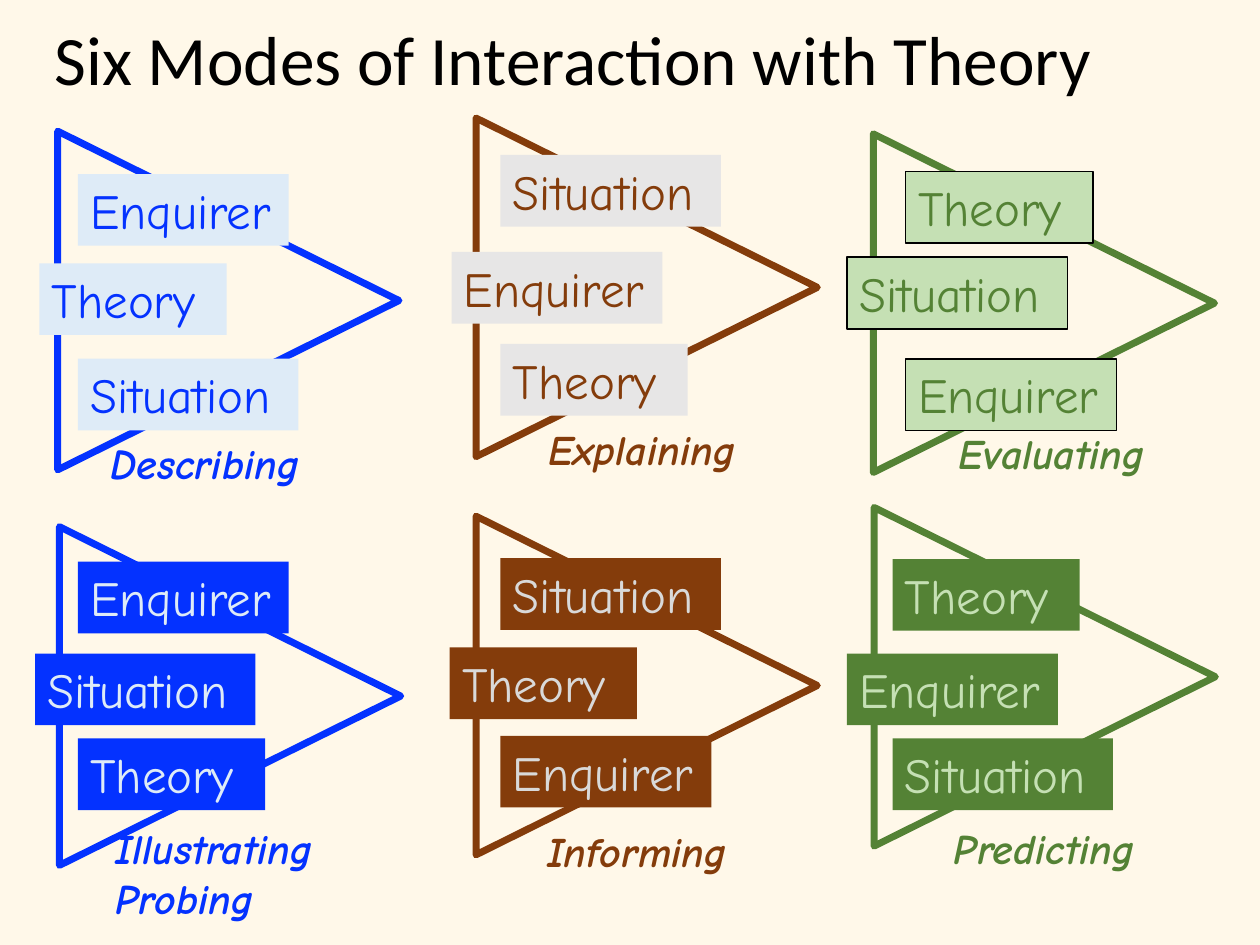
from dataclasses import dataclass

from pptx import Presentation
from pptx.dml.color import RGBColor
from pptx.enum.shapes import MSO_SHAPE
from pptx.enum.text import MSO_ANCHOR, PP_ALIGN
from pptx.util import Pt

RECTANGLE = MSO_SHAPE.RECTANGLE
TOP, MIDDLE = MSO_ANCHOR.TOP, MSO_ANCHOR.MIDDLE
LEFT = PP_ALIGN.LEFT

CREAM = RGBColor(0xFF, 0xF8, 0xE9)
BLACK = RGBColor(0x00, 0x00, 0x00)
BLUE = RGBColor(0x04, 0x32, 0xFF)
PALE_BLUE = RGBColor(0xDE, 0xEB, 0xF7)
BROWN = RGBColor(0x84, 0x3C, 0x0B)
PALE_GREY = RGBColor(0xE7, 0xE6, 0xE6)
GREY = RGBColor(0xD9, 0xD9, 0xD9)
GREEN = RGBColor(0x54, 0x82, 0x35)
PALE_GREEN = RGBColor(0xC5, 0xE0, 0xB4)

TITLE_FONT = "Calibri"
MODE_FONT = "Comic Neue"
TERM_WIDTHS = {"Enquirer": 120.5, "Theory": 107, "Situation": 126}
TERM_HEIGHT = 41
TRIANGLE_WIDTH, TRIANGLE_HEIGHT = 195, 193.5


@dataclass
class Mode:
    names: list
    terms: list
    term_tops: list
    outer_left: float
    middle_left: float
    triangle: tuple
    label: tuple
    label_width: float
    main: RGBColor
    fill: RGBColor
    ink: RGBColor
    border: RGBColor = None


MODES = [
    Mode(["Describing"], ["Enquirer", "Theory", "Situation"], [99.5, 150.5, 205],
         44.5, 22.5, (33, 75), (56, 246.5), 135.5, BLUE, PALE_BLUE, BLUE),
    Mode(["Explaining"], ["Situation", "Enquirer", "Theory"], [88.5, 144, 196.5],
         286, 258, (272, 67.5), (306.5, 238.5), 130.5, BROWN, PALE_GREY, BROWN),
    Mode(["Evaluating"], ["Theory", "Situation", "Enquirer"], [98, 147, 205],
         517.5, 484, (499, 76.5), (540.5, 240.5), 131, GREEN, PALE_GREEN, GREEN, BLACK),
    Mode(["Illustrating", "Probing"], ["Enquirer", "Situation", "Theory"], [321, 373.5, 422],
         44.5, 20, (34, 301), (59, 466.5), 142.5, BLUE, BLUE, PALE_BLUE),
    Mode(["Informing"], ["Situation", "Theory", "Enquirer"], [319, 370, 420.5],
         286, 257, (272, 295), (305.5, 468), 129, BROWN, BROWN, GREY),
    Mode(["Predicting"], ["Theory", "Enquirer", "Situation"], [319.5, 373.5, 422],
         510, 484, (499.5, 290), (538, 466.5), 132, GREEN, GREEN, PALE_GREEN),
]


def write_text(shape, lines, *, font, size, color, bold=False, italic=False,
               anchor=TOP, spacing=1.0):
    frame = shape.text_frame
    frame.word_wrap = True
    frame.vertical_anchor = anchor
    frame.margin_left = frame.margin_right = Pt(7.2)
    frame.margin_top = frame.margin_bottom = Pt(3.6)
    frame.text = "\n".join(lines)
    for paragraph in frame.paragraphs:
        paragraph.alignment = LEFT
        paragraph.line_spacing = spacing
        for run in paragraph.runs:
            run.font.name = font
            run.font.size = Pt(size)
            run.font.bold = bold
            run.font.italic = italic
            run.font.color.rgb = color


def add_title(slide, text):
    title = slide.shapes.title
    title.left, title.top = Pt(24), Pt(12)
    title.width, title.height = Pt(696), Pt(48.5)
    write_text(title, [text], font=TITLE_FONT, size=39.6, color=BLACK,
               anchor=MIDDLE, spacing=0.9)


def add_triangle(shapes, left, top, color):
    builder = shapes.build_freeform(Pt(left), Pt(top))
    builder.add_line_segments([
        (Pt(left), Pt(top + TRIANGLE_HEIGHT)),
        (Pt(left + TRIANGLE_WIDTH), Pt(top + TRIANGLE_HEIGHT / 2)),
    ], close=True)
    triangle = builder.convert_to_shape()
    triangle.shadow.inherit = False
    triangle.fill.background()
    triangle.line.color.rgb = color
    triangle.line.width = Pt(4)


def add_term(shapes, term, left, top, mode):
    box = shapes.add_shape(RECTANGLE, Pt(left), Pt(top),
                           Pt(TERM_WIDTHS[term]), Pt(TERM_HEIGHT))
    box.shadow.inherit = False
    box.fill.solid()
    box.fill.fore_color.rgb = mode.fill
    if mode.border is None:
        box.line.fill.background()
    else:
        box.line.color.rgb = mode.border
        box.line.width = Pt(1)
    write_text(box, [term], font=MODE_FONT, size=28, color=mode.ink)


def add_label(shapes, mode):
    left, top = mode.label
    height = 36 if len(mode.names) == 1 else 65.5
    label = shapes.add_textbox(Pt(left), Pt(top), Pt(mode.label_width), Pt(height))
    write_text(label, mode.names, font=MODE_FONT, size=24, color=mode.main,
               bold=True, italic=True)


def add_mode(slide, mode):
    shapes = slide.shapes.add_group_shape().shapes
    add_triangle(shapes, *mode.triangle, mode.main)
    term_lefts = [mode.outer_left, mode.middle_left, mode.outer_left]
    for term, left, top in zip(mode.terms, term_lefts, mode.term_tops):
        add_term(shapes, term, left, top, mode)
    add_label(shapes, mode)


def main():
    deck = Presentation()
    deck.slide_width, deck.slide_height = Pt(720), Pt(540)
    slide = deck.slides.add_slide(deck.slide_layouts[5])
    slide.background.fill.solid()
    slide.background.fill.fore_color.rgb = CREAM
    add_title(slide, "Six Modes of Interaction with Theory")
    for mode in MODES:
        add_mode(slide, mode)
    deck.save("out.pptx")


if __name__ == "__main__":
    main()
